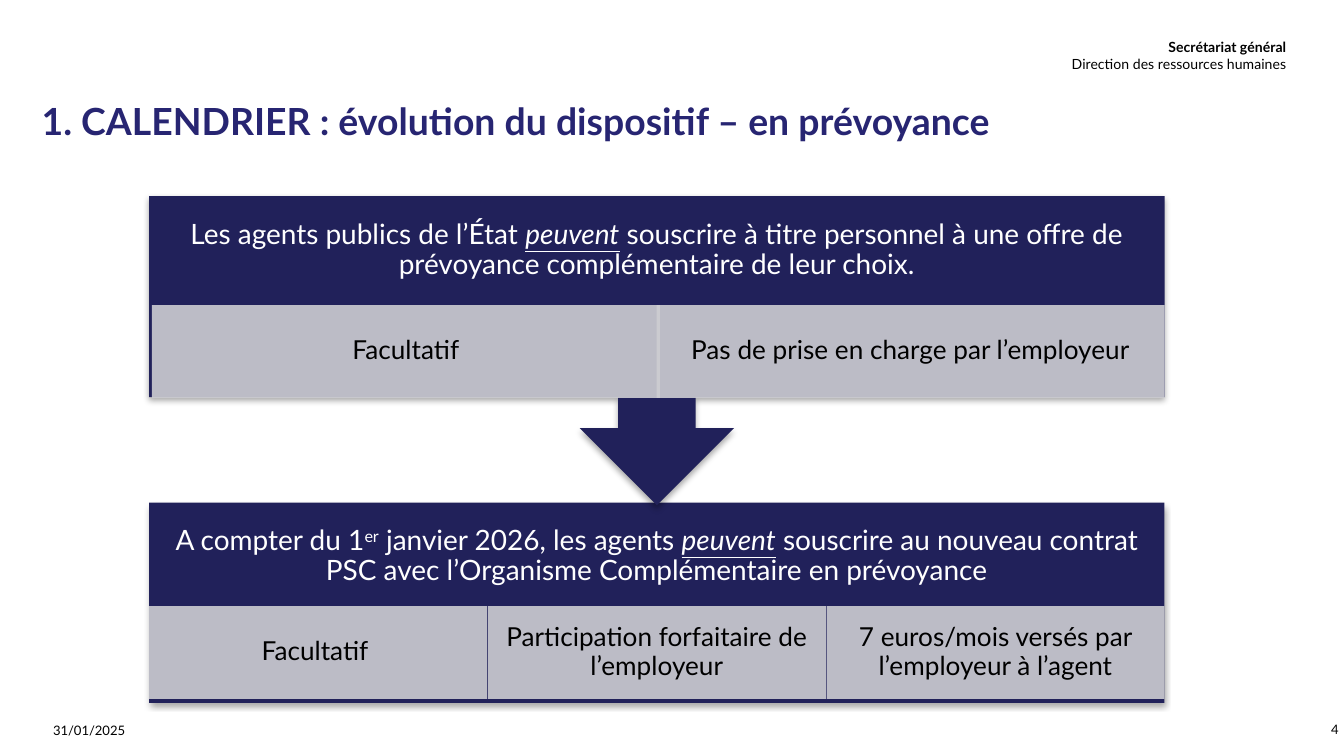
from lxml import etree
from pptx import Presentation
from pptx.dml.color import RGBColor
from pptx.enum.shapes import MSO_SHAPE as SHAPE
from pptx.enum.text import MSO_ANCHOR as ANCHOR, PP_ALIGN as ALIGN
from pptx.oxml import parse_xml
from pptx.oxml.ns import nsdecls, qn
from pptx.util import Pt

PX = 4572  # 200 px to the inch
THEME = {
    "font": "Lato",
    "title": "272572", "navy": "21215A", "grey": "CDCDD2",
    "white": "FFFFFF", "black": "000000",
    "title_pt": 20, "head_pt": 15, "cell_pt": 14, "org_pt": 7.5, "foot_pt": 7,
}
SHADOW = (
    f'<a:effectLst {nsdecls("a")}><a:outerShdw blurRad="{Pt(3.1)}" dist="{Pt(1.8)}"'
    ' dir="5400000" rotWithShape="0"><a:srgbClr val="000000"><a:alpha val="35000"/>'
    '</a:srgbClr></a:outerShdw></a:effectLst>'
)

prs = Presentation()
prs.slide_width, prs.slide_height = 2000 * PX, 1125 * PX
s = prs.slides.add_slide(prs.slide_layouts[6])


def add_block(kind, box, fill):
    sp = s.shapes.add_shape(kind, *[v * PX for v in box])
    sp.shadow.inherit = False
    sp.fill.solid()
    sp.fill.fore_color.rgb = RGBColor.from_string(THEME[fill])
    sp.line.fill.background()
    return sp


def write(sp, paragraphs, size, color, align, insets=(0, 0), spacing=1.0):
    """Fill sp with paragraphs, each a list of (text, style) runs."""
    tf = sp.text_frame
    tf.word_wrap = True
    tf.vertical_anchor = ANCHOR.MIDDLE
    tf.margin_left = tf.margin_right = insets[0] * PX
    tf.margin_top = tf.margin_bottom = insets[1] * PX
    for i, runs in enumerate(paragraphs):
        p = tf.paragraphs[0] if i == 0 else tf.add_paragraph()
        p.alignment = align
        p.line_spacing = spacing
        for text, style in runs:
            r = p.add_run()
            r.text = text
            r.font.name = THEME["font"]
            r.font.size = Pt(THEME[size])
            r.font.color.rgb = RGBColor.from_string(THEME[color])
            r.font.bold = style == "bold"
            if style == "stress":
                r.font.italic = r.font.underline = True
            if style == "super":
                r.font._element.set("baseline", "30000")


# Title, header and footer
labels = [
    ((40, 124, 1922, 118), [[("1. CALENDRIER : évolution du dispositif – en prévoyance", "bold")]],
     "title_pt", "title", ALIGN.LEFT, (22, 10), 0.9),
    ((628, 43, 1286, 78), [[("Secrétariat général", "bold")],
                           [(" Direction des ressources humaines", "")]],
     "org_pt", "black", ALIGN.RIGHT),
    ((1618, 1046, 374, 78), [[("4", "")]], "foot_pt", "black", ALIGN.RIGHT),
    ((79, 1049, 256, 76), [[("31/01/2025", "")]], "foot_pt", "black", ALIGN.LEFT),
]
for box, *content in labels:
    write(s.shapes.add_textbox(*[v * PX for v in box]), *content)

# Two stages, the later one behind the arrow of the earlier one
LEFT, WIDTH, HEAD_H, CELL_H = 222, 1511, 161, 138
stages = [
    {"kind": SHAPE.RECTANGLE, "rotation": 0, "top": 748, "height": 298,
     "cell_left": 222, "cell_top": 902, "cell_w": 503, "step": 504,
     "head": [("A compter du 1", ""), ("er", "super"), (" janvier 2026, les agents ", ""),
              ("peuvent", "stress"),
              (" souscrire au nouveau contrat PSC avec l’Organisme Complémentaire"
               " en prévoyance", "")],
     "cells": ["Facultatif ", "Participation forfaitaire de l’employeur",
               "7 euros/mois versés par l’employeur à l’agent"]},
    {"kind": SHAPE.UP_ARROW_CALLOUT, "rotation": 180, "top": 292, "height": 460,
     "cell_left": 226, "cell_top": 454, "cell_w": 756, "step": 751,
     "head": [("Les agents publics de l’État ", ""), ("peuvent", "stress"),
              (" souscrire à titre personnel à une offre de prévoyance complémentaire"
               " de leur choix.", "")],
     "cells": ["Facultatif", "Pas de prise en charge par l’employeur"]},
]
for stage in stages:
    body = add_block(stage["kind"], (LEFT, stage["top"], WIDTH, stage["height"]), "navy")
    body.rotation = stage["rotation"]
    spPr = body._element.spPr
    spPr.replace(spPr.find(qn("a:effectLst")), parse_xml(SHADOW))

    head = s.shapes.add_textbox(*[v * PX for v in (LEFT, stage["top"], WIDTH, HEAD_H)])
    write(head, [stage["head"]], "head_pt", "white", ALIGN.CENTER, (24, 24), 0.9)

    for i, text in enumerate(stage["cells"]):
        left = stage["cell_left"] + i * stage["step"]
        cell = add_block(SHAPE.RECTANGLE, (left, stage["cell_top"], stage["cell_w"], CELL_H), "grey")
        color = cell._element.spPr.find(qn("a:solidFill"))[0]
        etree.SubElement(color, qn("a:alpha")).set("val", "90000")
        write(cell, [[(text, "")]], "cell_pt", "black", ALIGN.CENTER, (22, 4), 0.9)

prs.save("out.pptx")
